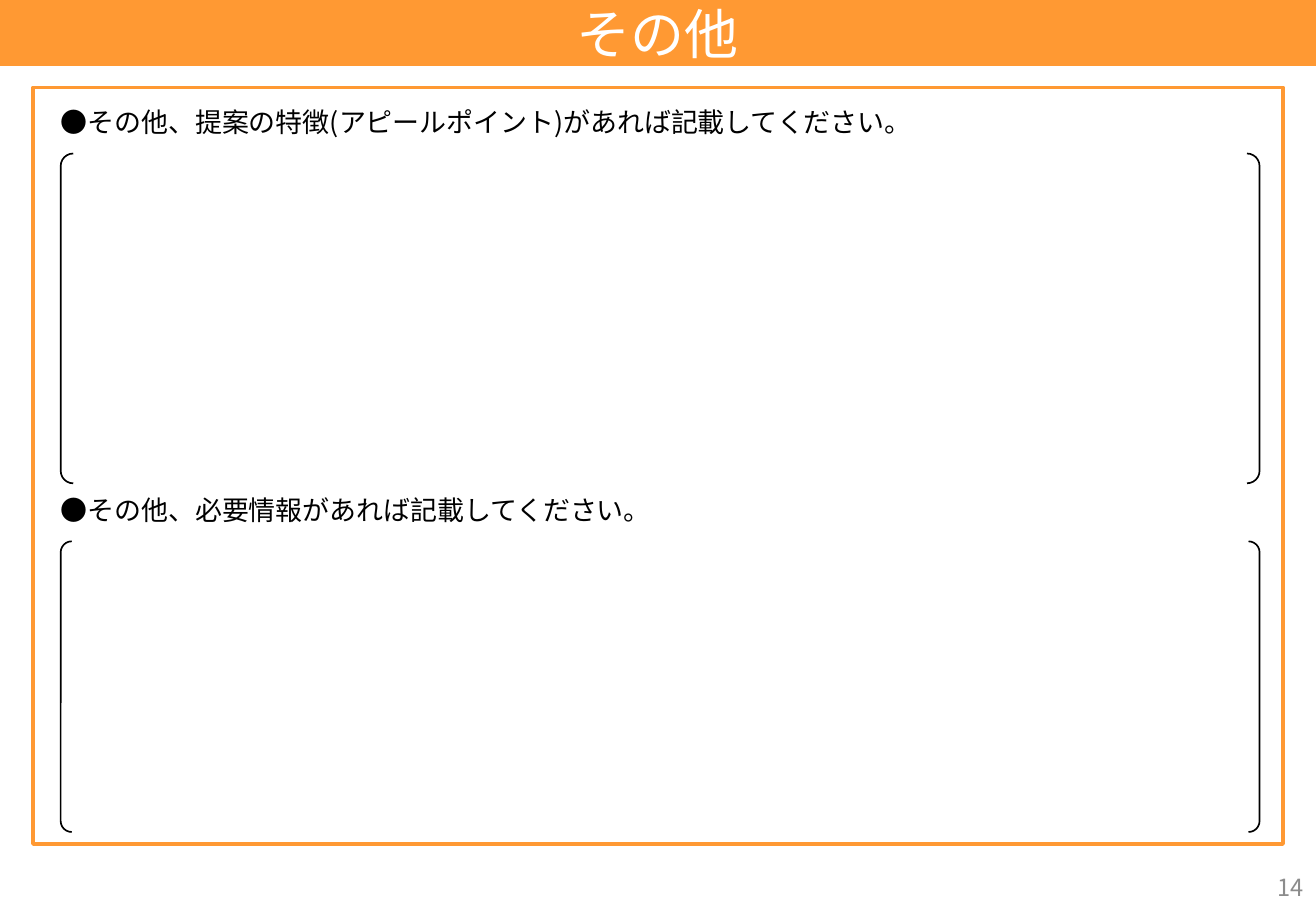
from lxml import etree
from pptx import Presentation
from pptx.dml.color import RGBColor
from pptx.enum import shapes, text
from pptx.oxml import ns
from pptx.util import Pt

ORANGE = RGBColor(0xFF, 0x99, 0x33)
BLACK = RGBColor(0, 0, 0)
WHITE = RGBColor(0xFF, 0xFF, 0xFF)
GRAY = RGBColor(0x8C, 0x8C, 0x8C)
FONT = "Noto Sans CJK JP"
PAGE_WIDTH, PAGE_HEIGHT = 780, 540


def write(box, words, size, color, align=text.PP_ALIGN.LEFT,
          anchor=text.MSO_ANCHOR.TOP, margin=0):
    frame = box.text_frame
    frame.auto_size = text.MSO_AUTO_SIZE.NONE
    frame.word_wrap = True
    frame.vertical_anchor = anchor
    frame.margin_left = frame.margin_right = Pt(margin)
    frame.margin_top = frame.margin_bottom = 0
    para = frame.paragraphs[0]
    para.alignment = align
    span = para.add_run()
    span.text = words
    span.font.size = Pt(size)
    span.font.color.rgb = color
    span.font.name = FONT
    east_asian = etree.SubElement(span.font._element, ns.qn("a:ea"))
    east_asian.set("typeface", FONT)


def add_outline(page, kind, left, top, width, height, color, weight):
    outline = page.shapes.add_shape(
        kind, Pt(left), Pt(top), Pt(width), Pt(height))
    outline.shadow.inherit = False
    outline.fill.background()
    outline.line.color.rgb = color
    outline.line.width = Pt(weight)
    return outline


def add_title_band(page, words, left, top, width, height):
    title = page.shapes.title
    title.left, title.top = Pt(left), Pt(top)
    title.width, title.height = Pt(width), Pt(height)
    title.fill.solid()
    title.fill.fore_color.rgb = ORANGE
    write(title, words, 32, WHITE, align=text.PP_ALIGN.CENTER,
          anchor=text.MSO_ANCHOR.MIDDLE)


def add_answer_section(page, prompt, left, top, width, height):
    """Place a prompt line with an empty bracketed answer area below it."""
    label = page.shapes.add_textbox(Pt(left), Pt(top), Pt(width), Pt(20))
    write(label, prompt, 16, BLACK)
    offset = 28.5
    bracket = add_outline(page, shapes.MSO_SHAPE.DOUBLE_BRACKET, left,
                          top + offset, width, height - offset, BLACK, 1)
    bracket.adjustments[0] = 0.038


def add_page_number(page, number, left, top, width, height):
    box = page.shapes.add_textbox(Pt(left), Pt(top), Pt(width), Pt(height))
    write(box, number, 14, GRAY, align=text.PP_ALIGN.RIGHT,
          anchor=text.MSO_ANCHOR.MIDDLE, margin=7.2)


def main():
    deck = Presentation()
    deck.slide_width, deck.slide_height = Pt(PAGE_WIDTH), Pt(PAGE_HEIGHT)
    page = deck.slides.add_slide(deck.slide_layouts.get_by_name("Title Only"))
    add_title_band(page, "その他", 0, 0, PAGE_WIDTH, 39)
    add_outline(page, shapes.MSO_SHAPE.RECTANGLE,
                19.5, 51.8, PAGE_WIDTH - 2 * 19.5, 448.6, ORANGE, 2)
    sections = [
        ("●その他、提案の特徴(アピールポイント)があれば記載してください。", 62.5, 224),
        ("●その他、必要情報があれば記載してください。", 292.4, 200.8),
    ]
    for prompt, top, height in sections:
        add_answer_section(page, prompt, 36, top, 710.6, height)
    add_page_number(page, "14", PAGE_WIDTH - 175.5, 511.2, 175.5, 28.8)
    deck.save("out.pptx")


if __name__ == "__main__":
    main()
